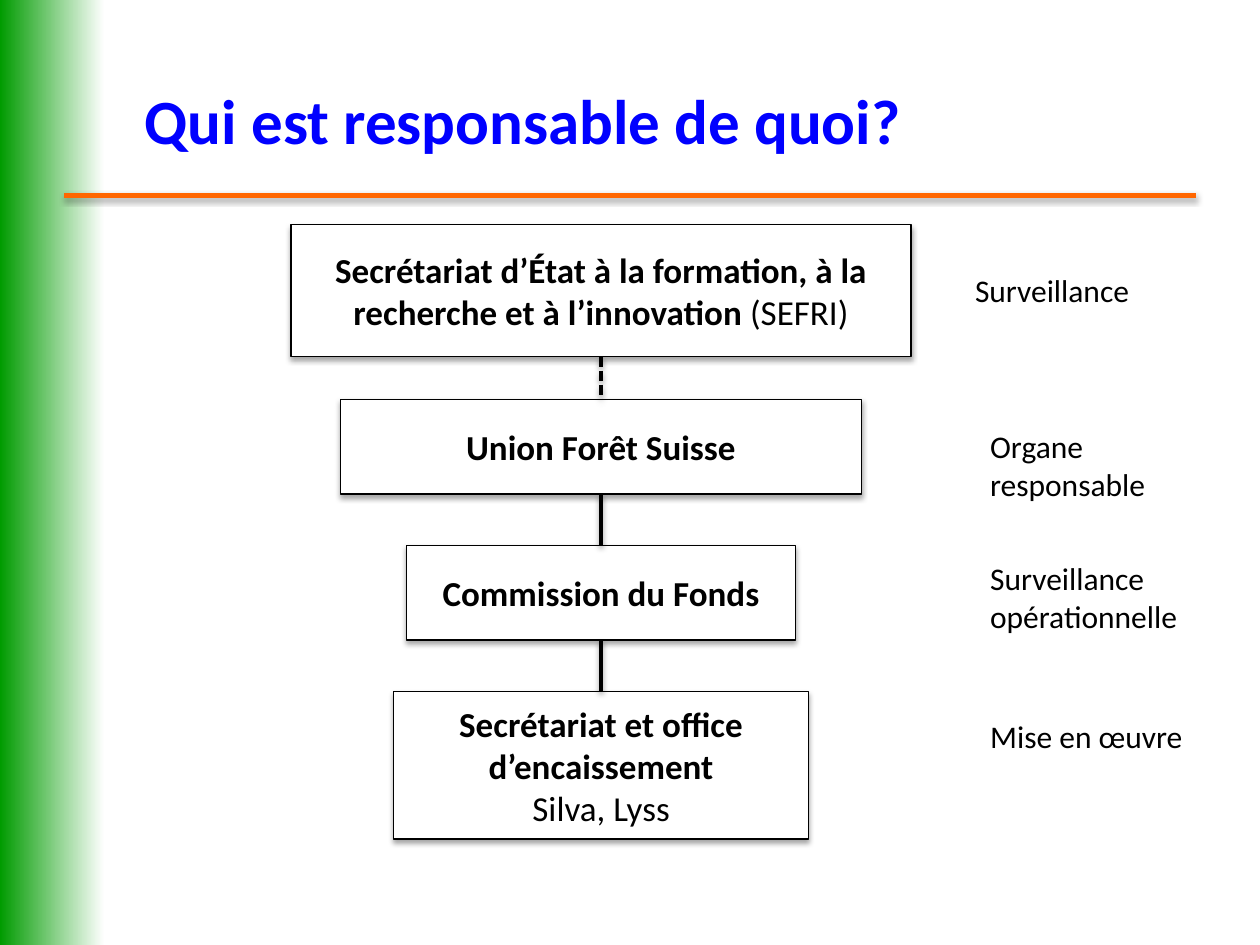
import lxml.etree
import pptx
import pptx.dml.color
import pptx.enum.dml
import pptx.enum.shapes
import pptx.enum.text
import pptx.oxml.ns
import pptx.util

COLORS = {"green": "009B00", "white": "FFFFFF", "orange": "FF6600",
          "black": "000000", "blue": "0000FF"}
COLUMNS, ROWS = 100, 75
CENTER = 47.7
TITLE = {"size": 36, "bold": True, "color": "blue"}
STRONG = {"size": 20, "bold": True, "color": "black"}
PLAIN = {"size": 20, "bold": False, "color": "black"}
ROLE = {"size": 18, "bold": False, "color": "black"}

BODIES = [
    (17.8, 49.2, 10.5, [[("Secrétariat d’État à la formation, à la recherche et à l’innovation ", STRONG),
                         ("(SEFRI)", PLAIN)]]),
    (31.7, 41.4, 7.5, [[("Union Forêt Suisse", STRONG)]]),
    (43.3, 30.9, 7.5, [[("Commission du Fonds", STRONG)]]),
    (54.9, 32.9, 11.7, [[("Secrétariat et office d’encaissement", STRONG)],
                        [("Silva, Lyss", PLAIN)]]),
]
ROLES = [
    ("Surveillance", (76.4, 21, 17.3, 4)),
    ("Organe responsable", (77.6, 33.4, 18.9, 7.1)),
    ("Surveillance opérationnelle", (77.6, 43.9, 18.1, 7.1)),
    ("Mise en œuvre", (77.6, 56.4, 18.1, 4)),
]

deck = pptx.Presentation()
deck.slide_width = pptx.util.Inches(10)
deck.slide_height = pptx.util.Inches(7.5)


def rgb(name):
    return pptx.dml.color.RGBColor.from_string(COLORS[name])


def place(box):
    column, row = deck.slide_width / COLUMNS, deck.slide_height / ROWS
    return [round(value * unit) for value, unit in zip(box, (column, row, column, row))]


def add_shadow(item, distance, opacity):
    qn = pptx.oxml.ns.qn
    effects = lxml.etree.SubElement(item._element.spPr, qn("a:effectLst"))
    shadow = lxml.etree.SubElement(effects, qn("a:outerShdw"))
    values = {"blurRad": pptx.util.Pt(3.1), "dist": pptx.util.Pt(distance),
              "dir": 90 * 60000, "rotWithShape": 0}
    for name, value in values.items():
        shadow.set(name, str(value))
    color = lxml.etree.SubElement(shadow, qn("a:srgbClr"), val=COLORS["black"])
    lxml.etree.SubElement(color, qn("a:alpha"), val=str(opacity * 1000))


def write(frame, lines, align, anchor):
    frame.word_wrap = True
    frame.vertical_anchor = anchor
    for index, spans in enumerate(lines):
        para = frame.add_paragraph() if index else frame.paragraphs[0]
        para.alignment = align
        for text, style in spans:
            span = para.add_run()
            span.text = text
            span.font.color.rgb = rgb(style["color"])
            values = {"name": "Calibri", "size": pptx.util.Pt(style["size"]), "bold": style["bold"]}
            for name, value in values.items():
                setattr(span.font, name, value)


def add_label(page, text, style, box):
    label = page.shapes.add_textbox(*place(box))
    write(label.text_frame, [[(text, style)]],
          pptx.enum.text.PP_ALIGN.LEFT, pptx.enum.text.MSO_ANCHOR.TOP)


def add_line(page, start, end, color, width, dash=None):
    line = page.shapes.add_connector(
        pptx.enum.shapes.MSO_CONNECTOR.STRAIGHT, *place(start), *place(end))
    line.line.color.rgb = rgb(color)
    line.line.width = pptx.util.Pt(width)
    if dash:
        line.line.dash_style = dash
    add_shadow(line, 1.6, 38)
    return line


def add_band(page, box):
    band = page.shapes.add_shape(pptx.enum.shapes.MSO_SHAPE.RECTANGLE, *place(box))
    band.shadow.inherit = False
    band.line.fill.background()
    band.fill.gradient()
    band.fill.gradient_angle = 0
    for stop, name in zip(band.fill.gradient_stops, ("green", "white")):
        stop.color.rgb = rgb(name)


def add_header(page, box):
    left, top, width, height = box
    add_label(page, "Qui est responsable de quoi?", TITLE, (left + 5.4, top, 85.9, 8.7))
    add_line(page, (left, top + height), (left + width, top + height), "orange", 3)


def add_body(page, box, lines):
    body = page.shapes.add_shape(
        pptx.enum.shapes.MSO_SHAPE.FLOWCHART_PROCESS, *place(box))
    body.fill.solid()
    body.fill.fore_color.rgb = rgb("white")
    body.line.color.rgb = rgb("black")
    body.line.width = pptx.util.Pt(0.75)
    add_shadow(body, 1.8, 35)
    write(body.text_frame, lines,
          pptx.enum.text.PP_ALIGN.CENTER, pptx.enum.text.MSO_ANCHOR.MIDDLE)
    return body


def add_hierarchy(page, center):
    bodies = [add_body(page, (center - width / 2, top, width, height), lines)
              for top, width, height, lines in BODIES]
    dashes = [pptx.enum.dml.MSO_LINE.SQUARE_DOT, None, None]
    for upper, lower, dash in zip(bodies, bodies[1:], dashes):
        link = add_line(page, (center, 0), (center, 1), "black", 2, dash)
        link.begin_connect(upper, 2)
        link.end_connect(lower, 0)


def main():
    page = deck.slides.add_slide(deck.slide_layouts[6])
    add_band(page, (0, 0, 8.3, ROWS))
    add_header(page, (5.1, 6, 89.8, 9.5))
    add_hierarchy(page, CENTER)
    for text, box in ROLES:
        add_label(page, text, ROLE, box)
    deck.save("out.pptx")


if __name__ == "__main__":
    main()
